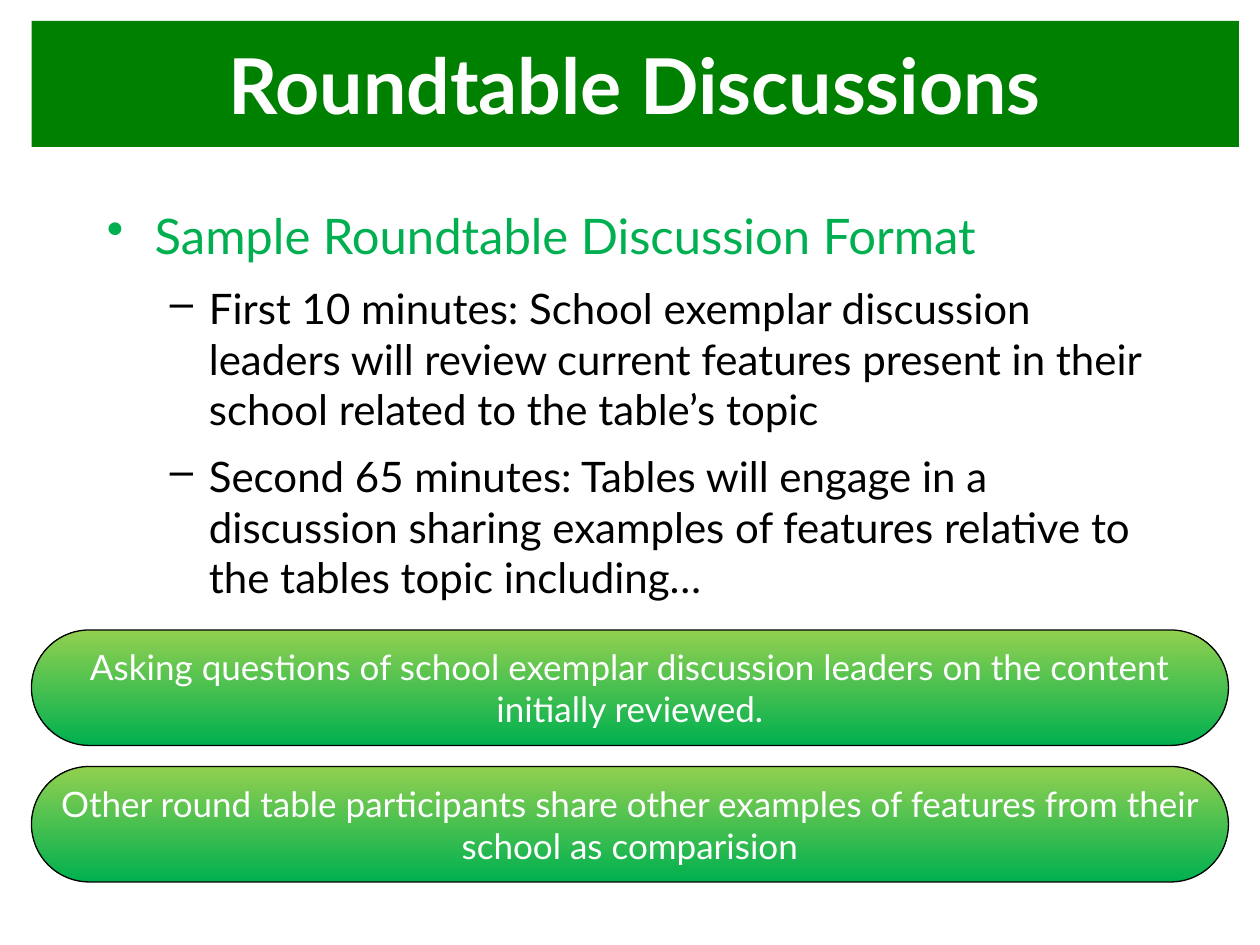
from lxml.etree import SubElement
from pptx import Presentation
from pptx.dml.color import RGBColor
from pptx.enum.shapes import MSO_SHAPE
from pptx.enum.text import MSO_ANCHOR, MSO_AUTO_SIZE, PP_ALIGN
from pptx.oxml.ns import qn
from pptx.util import Inches, Pt

CELLS_PER_INCH = 12

BODY_LEVELS = [
    {"bullet": "•", "margin": 0.38, "hanging": 0.38, "size": 28, "color": "00B050"},
    {"bullet": "–", "margin": 0.81, "hanging": 0.31, "size": 24, "color": "000000"},
]
AGENDA = [
    (0, "Sample Roundtable Discussion Format"),
    (1, "First 10 minutes: School exemplar discussion leaders will review current "
        "features present in their school related to the table’s topic"),
    (1, "Second 65 minutes: Tables will engage in a discussion sharing examples of "
        "features relative to the tables topic including…"),
]
ACTIVITIES = [
    "Asking questions of school exemplar discussion leaders on the content initially reviewed.",
    "Other round table participants share other examples of features from their school as comparision",
]


def rgb(value):
    return RGBColor.from_string(value)


def grid(*cells):
    """Turn grid columns and rows into lengths."""
    return [Inches(cell / CELLS_PER_INCH) for cell in cells]


def assign(target, values):
    for name, value in values.items():
        setattr(target, name, value)


class SlideBuilder:
    font_name = "Lato"
    text_color = "FFFFFF"
    bar_color = "008000"
    gradient_colors = ("00B050", "92D050")
    line_color = "000000"

    def __init__(self, presentation):
        title_only = presentation.slide_layouts[5]
        self.slide = presentation.slides.add_slide(title_only)

    def place(self, shape, cells):
        assign(shape, dict(zip(("left", "top", "width", "height"), grid(*cells))))

    def style_text(self, paragraph, size, color, bold=False):
        assign(paragraph.font, {"name": self.font_name, "size": Pt(size), "bold": bold})
        paragraph.font.color.rgb = rgb(color)

    def write_centered(self, shape, text, size, bold=False):
        frame = shape.text_frame
        frame.text = text
        assign(frame, {
            "word_wrap": True,
            "auto_size": MSO_AUTO_SIZE.NONE,
            "vertical_anchor": MSO_ANCHOR.MIDDLE,
            "margin_left": Inches(0.05),
            "margin_right": Inches(0.05),
        })
        paragraph = frame.paragraphs[0]
        paragraph.alignment = PP_ALIGN.CENTER
        self.style_text(paragraph, size, self.text_color, bold)

    def title_bar(self, text, cells):
        title = self.slide.shapes.title
        self.place(title, cells)
        title.fill.solid()
        title.fill.fore_color.rgb = rgb(self.bar_color)
        self.write_centered(title, text, 44, bold=True)

    def bullet_list(self, items, cells):
        frame = self.slide.shapes.add_textbox(*grid(*cells)).text_frame
        frame.word_wrap = True
        for index, (level, text) in enumerate(items):
            style = BODY_LEVELS[level]
            paragraph = frame.add_paragraph() if index else frame.paragraphs[0]
            gap = Pt(style["size"] * 0.2)
            assign(paragraph, {
                "text": text,
                "level": level,
                "space_before": gap if index else Pt(0),
                "space_after": gap,
            })
            properties = paragraph._p.get_or_add_pPr()
            properties.set("marL", str(Inches(style["margin"])))
            properties.set("indent", str(-Inches(style["hanging"])))
            SubElement(properties, qn("a:buChar"), char=style["bullet"])
            self.style_text(paragraph, style["size"], style["color"])

    def pill(self, text, cells):
        shape = self.slide.shapes.add_shape(MSO_SHAPE.ROUNDED_RECTANGLE, *grid(*cells))
        shape.adjustments[0] = 0.5
        shape.shadow.inherit = False
        shape.fill.gradient()
        shape.fill.gradient_angle = 90
        for stop, color in zip(shape.fill.gradient_stops, self.gradient_colors):
            stop.color.rgb = rgb(color)
        shape.line.color.rgb = rgb(self.line_color)
        shape.line.width = Pt(0.75)
        self.write_centered(shape, text, 20)


def main():
    presentation = Presentation()
    assign(presentation, {"slide_width": Inches(10), "slide_height": Inches(7.5)})
    builder = SlideBuilder(presentation)
    builder.title_bar("Roundtable Discussions", (3, 2, 115, 12))
    builder.bullet_list(AGENDA, (9, 19, 102, 61))
    for index, activity in enumerate(ACTIVITIES):
        builder.pill(activity, (3, 60 + 13 * index, 114, 11))
    presentation.save("out.pptx")


if __name__ == "__main__":
    main()
